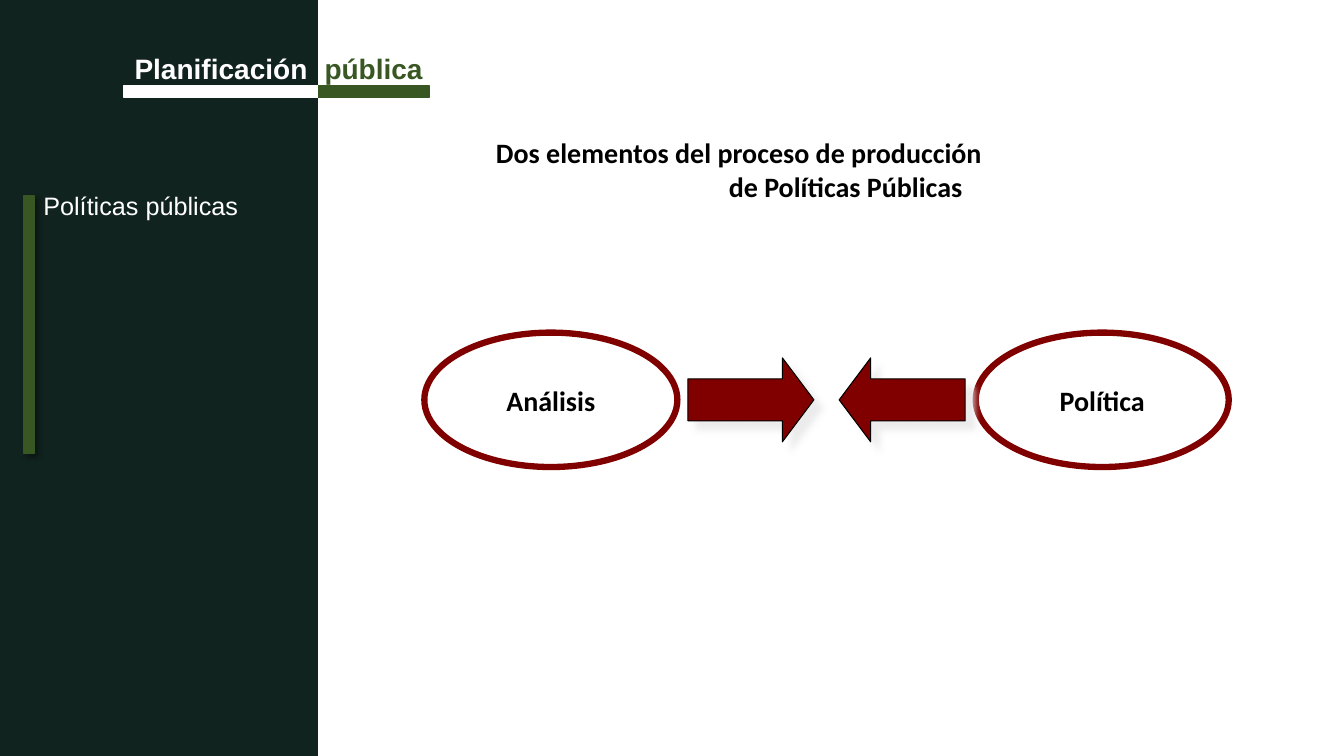
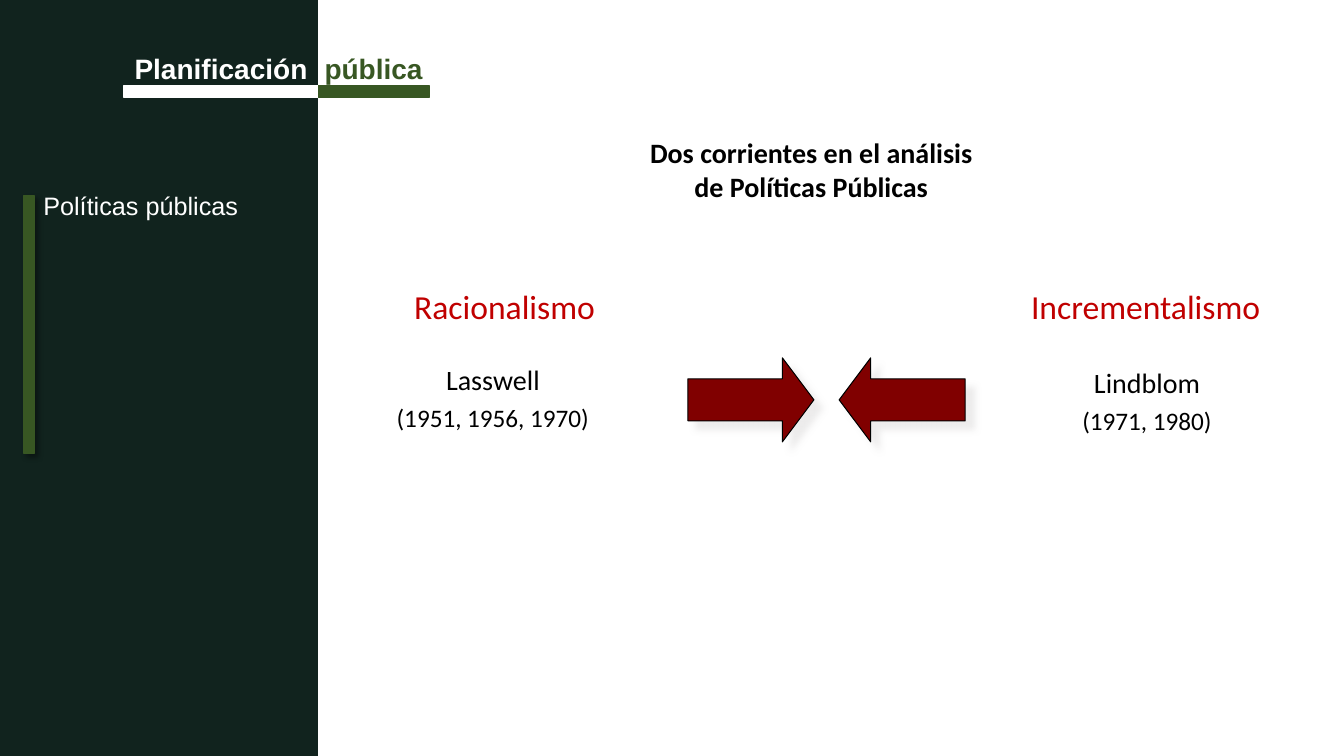
"""Build two slides on the analysis of public policy."""
from dataclasses import dataclass
from typing import Any, Optional

from lxml.etree import SubElement
from pptx import Presentation
from pptx.dml.color import RGBColor
from pptx.enum.shapes import MSO_SHAPE as Preset
from pptx.enum.text import MSO_ANCHOR as Anchor, MSO_AUTO_SIZE as AutoSize, PP_ALIGN as Align
from pptx.oxml.ns import qn
from pptx.slide import Slide
from pptx.util import Inches, Pt

WIDTH, HEIGHT = Inches(13.33), Inches(7.5)
COLUMN, ROW = WIDTH / 80, HEIGHT / 45

NIGHT = RGBColor(0x11, 0x23, 0x1E)
GREEN = RGBColor(0x38, 0x57, 0x23)
MAROON = RGBColor(0x80, 0x00, 0x00)
RED = RGBColor(0xC0, 0x00, 0x00)
SILVER = RGBColor(0xE7, 0xE6, 0xE6)
WHITE = RGBColor(0xFF, 0xFF, 0xFF)
BLACK = RGBColor(0x00, 0x00, 0x00)


@dataclass(frozen=True)
class Area:
    left: float
    top: float
    width: float
    height: float

    def format(self) -> dict[str, int]:
        return {
            "left": round(self.left * COLUMN),
            "top": round(self.top * ROW),
            "width": round(self.width * COLUMN),
            "height": round(self.height * ROW),
        }


@dataclass(frozen=True)
class Shadow:
    color: RGBColor
    opacity: int
    blur: float
    distance: float


@dataclass(frozen=True)
class Look:
    fill: RGBColor
    line: Optional[RGBColor] = None
    weight: float = 1
    shadow: Optional[Shadow] = None


@dataclass(frozen=True)
class Line:
    text: str
    size: float = 20
    color: RGBColor = BLACK
    bold: bool = False
    font: str = "Calibri"
    align: Align = Align.CENTER
    indent: float = 0
    before: float = 0


@dataclass(frozen=True)
class HeaderPart:
    word: str
    color: RGBColor
    left: float
    width: float


@dataclass(frozen=True)
class Current:
    name: str
    name_area: Area
    author: str
    years: str
    author_area: Area


ARROW_LOOK = Look(MAROON, BLACK, 0.75, Shadow(SILVER, 75, 5, 8.5))
ELLIPSE_LOOK = Look(WHITE, MAROON, 4.5)
ACCENT_LOOK = Look(GREEN, GREEN, 1, Shadow(BLACK, 40, 4, 3))

TITLE_AREA = Area(28.74, 7.08, 39.48, 6)
TOPIC_AREA = Area(1.98, 11.04, 16.5, 3)
SIDEBAR_AREA = Area(0, 0, 18.93, 45)
ACCENT_AREA = Area(1.44, 11.64, 0.6, 15.36)
AXIS = 49.2

HEADER = [
    HeaderPart("Planificación", WHITE, 7.38, 11.56),
    HeaderPart("pública", GREEN, 18.94, 6.6),
]
CURRENTS = [
    Current("Racionalismo", Area(24.06, 16.74, 12.06, 3),
            "Lasswell", "(1951, 1956, 1970)", Area(22.56, 21.3, 13.56, 4.8)),
    Current("Incrementalismo", Area(60.78, 16.74, 15, 3),
            "Lindblom", "(1971, 1980)", Area(62.76, 21.48, 11.04, 4.8)),
]


def apply(target: Any, values: dict[str, Any]) -> None:
    for attribute, value in values.items():
        setattr(target, attribute, value)


def write(holder: Any, lines: list[Line], anchor: Anchor = Anchor.TOP, wrap: bool = True) -> None:
    frame = holder.text_frame
    apply(frame, {"auto_size": AutoSize.NONE, "word_wrap": wrap, "vertical_anchor": anchor})
    for index, line in enumerate(lines):
        paragraph = frame.add_paragraph() if index else frame.paragraphs[0]
        apply(paragraph, {"alignment": line.align, "space_before": Pt(line.before)})
        properties = paragraph._p.get_or_add_pPr()
        properties.set("marL", str(round(line.indent * COLUMN)))
        properties.set("indent", "0")
        SubElement(properties, qn("a:buNone"))
        run = paragraph.add_run()
        run.text = line.text
        apply(run.font, {"size": Pt(line.size), "bold": line.bold, "name": line.font})
        run.font.color.rgb = line.color


def add_label(slide: Slide, area: Area, lines: list[Line], wrap: bool = True) -> None:
    write(slide.shapes.add_textbox(**area.format()), lines, wrap=wrap)


def cast_shadow(figure: Any, shadow: Shadow) -> None:
    effects = figure.element.spPr.find(qn("a:effectLst"))
    outer = SubElement(effects, qn("a:outerShdw"), {
        "blurRad": str(Pt(shadow.blur)), "dist": str(Pt(shadow.distance)),
        "dir": "2700000", "algn": "tl", "rotWithShape": "0",
    })
    color = SubElement(outer, qn("a:srgbClr"), {"val": str(shadow.color)})
    SubElement(color, qn("a:alpha"), {"val": str(shadow.opacity * 1000)})


def add_figure(slide: Slide, preset: Preset, area: Area, look: Look) -> Any:
    figure = slide.shapes.add_shape(preset, **area.format())
    figure.shadow.inherit = False
    figure.fill.solid()
    figure.fill.fore_color.rgb = look.fill
    if look.line is None:
        figure.line.fill.background()
    else:
        figure.line.color.rgb = look.line
        figure.line.width = Pt(look.weight)
    if look.shadow:
        cast_shadow(figure, look.shadow)
    return figure


def mirrored(gap: float, top: float, width: float, height: float) -> list[Area]:
    return [Area(left, top, width, height) for left in (AXIS - gap - width, AXIS + gap)]


def start_slide(deck: Any, title: list[Line]) -> Slide:
    slide = deck.slides.add_slide(deck.slide_layouts[1])
    heading, topic = slide.shapes.title, slide.placeholders[1]
    apply(heading, TITLE_AREA.format())
    write(heading, title, Anchor.MIDDLE)
    apply(topic, TOPIC_AREA.format())
    write(topic, [Line("Políticas públicas", 18, WHITE, font="Arial", align=Align.LEFT)])
    sidebar = add_figure(slide, Preset.RECTANGLE, SIDEBAR_AREA, Look(NIGHT))
    heading.element.addprevious(sidebar.element)
    add_figure(slide, Preset.RECTANGLE, ACCENT_AREA, ACCENT_LOOK)
    for part in HEADER:
        add_figure(slide, Preset.RECTANGLE, Area(part.left, 5.1, part.width, 0.72),
                   Look(part.color, part.color))
        add_label(slide, Area(part.left, 2.76, part.width, 2.64),
                  [Line(part.word, 20, part.color, True, "Arial")], wrap=False)
    return slide


def add_arrows(slide: Slide) -> None:
    for area, rotation in zip(mirrored(0.75, 21.3, 7.5, 5), (0, 180)):
        arrow = add_figure(slide, Preset.RIGHT_ARROW, area, ARROW_LOOK)
        arrow.rotation = rotation
        arrow.adjustments[0], arrow.adjustments[1] = 0.5, 0.375


def build_elements(deck: Any) -> None:
    slide = start_slide(deck, [
        Line("Dos elementos del proceso de producción", bold=True, align=Align.LEFT, indent=0.18),
        Line("de Políticas Públicas", bold=True, align=Align.LEFT, indent=14.04),
    ])
    for area, name in zip(mirrored(8.88, 19.8, 15.06, 8), ("Análisis", "Política")):
        ellipse = add_figure(slide, Preset.OVAL, area, ELLIPSE_LOOK)
        write(ellipse, [Line(name, bold=True)], Anchor.MIDDLE, wrap=False)
    add_arrows(slide)


def build_currents(deck: Any) -> None:
    slide = start_slide(deck, [
        Line("Dos corrientes en el análisis ", bold=True),
        Line("de Políticas Públicas ", bold=True),
    ])
    add_arrows(slide)
    for current in CURRENTS:
        add_label(slide, current.name_area,
                  [Line(current.name, 24, RED, align=Align.LEFT)], wrap=False)
        add_label(slide, current.author_area,
                  [Line(current.author), Line(current.years, 18, before=4)])


def main() -> None:
    deck = Presentation()
    apply(deck, {"slide_width": WIDTH, "slide_height": HEIGHT})
    build_elements(deck)
    build_currents(deck)
    deck.save("out.pptx")


if __name__ == "__main__":
    main()
